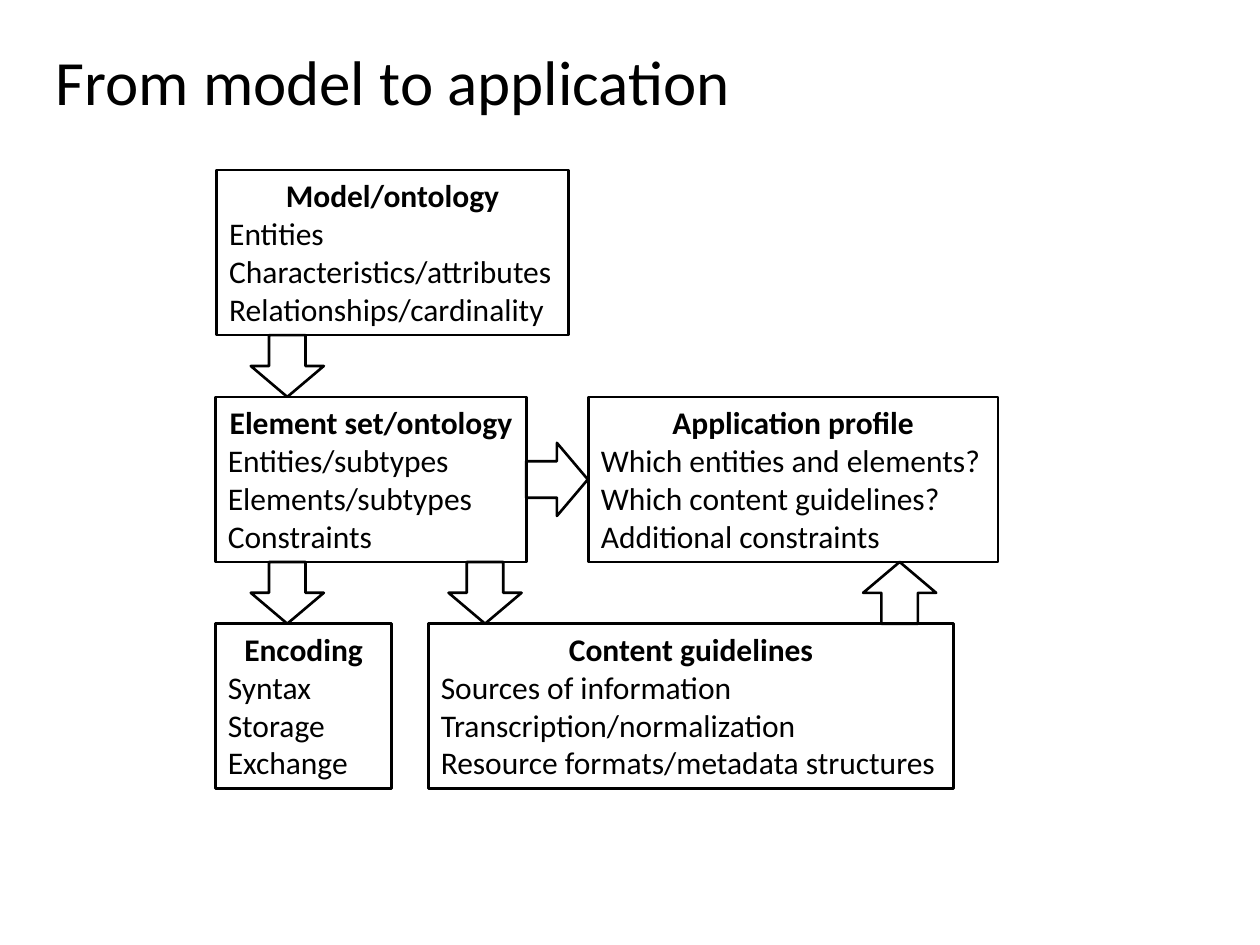
from pptx import Presentation
from pptx.dml.color import RGBColor
from pptx.enum.shapes import MSO_SHAPE
from pptx.enum.text import MSO_ANCHOR, MSO_AUTO_SIZE, PP_ALIGN
from pptx.util import Inches, Pt

RECT, ARROW = MSO_SHAPE.RECTANGLE, MSO_SHAPE.DOWN_ARROW
LEFT, CENTER = PP_ALIGN.LEFT, PP_ALIGN.CENTER
TOP = MSO_ANCHOR.TOP
FIT = MSO_AUTO_SIZE.SHAPE_TO_FIT_TEXT

FONT, BLACK = "Calibri", "000000"
TITLE = "From model to application"
ROW_TOP, BOX_H, GAP = 1.35, 1.31, 0.49
ARROW_W = 0.58

# row, left, width, heading, lines
BOXES = [
    (0, 1.72, 2.79, "Model/ontology",
     ["Entities", "Characteristics/attributes", "Relationships/cardinality"]),
    (1, 1.71, 2.47, "Element set/ontology",
     ["Entities/subtypes", "Elements/subtypes", "Constraints"]),
    (1, 4.67, 3.25, "Application profile",
     ["Which entities and elements?", "Which content guidelines?",
      "Additional constraints"]),
    (2, 1.71, 1.4, "Encoding", ["Syntax", "Storage", "Exchange"]),
    (2, 3.4, 4.17, "Content guidelines",
     ["Sources of information", "Transcription/normalization",
      "Resource formats/metadata structures"]),
]
VERTICAL_ARROWS = [(0, 1.99, 0), (1, 1.99, 0), (1, 3.56, 0), (1, 6.85, 180)]
SIDE_ARROW_LEFT = 4.13


def color(value):
    return RGBColor.from_string(value)


def row_y(row):
    return ROW_TOP + row * (BOX_H + GAP)


def write(p, text, size=18, bold=False, align=LEFT):
    p.alignment = align
    r = p.add_run()
    r.text = text
    r.font.name = FONT
    r.font.size = Pt(size)
    r.font.bold = bold
    r.font.color.rgb = color(BLACK)


def add_outline(s, kind, x, y, w, h, rotation=0):
    sp = s.shapes.add_shape(kind, Inches(x), Inches(y), Inches(w), Inches(h))
    sp.shadow.inherit = False
    sp.fill.background()
    sp.line.color.rgb = color(BLACK)
    sp.line.width = Pt(1.5)
    sp.rotation = rotation
    return sp


def fit_text(tf):
    tf.word_wrap = False
    tf.auto_size = FIT
    tf.vertical_anchor = TOP


def add_box(s, row, x, w, heading, lines):
    tf = add_outline(s, RECT, x, row_y(row), w, BOX_H).text_frame
    fit_text(tf)
    write(tf.paragraphs[0], heading, bold=True, align=CENTER)
    for line in lines:
        write(tf.add_paragraph(), line)


def main():
    prs = Presentation()
    prs.slide_width, prs.slide_height = Inches(10), Inches(7.5)
    s = prs.slides.add_slide(prs.slide_layouts[5])

    title = s.shapes.title
    title.left, title.top = Inches(0.34), Inches(0.29)
    title.width, title.height = Inches(5.61), Inches(0.71)
    fit_text(title.text_frame)
    write(title.text_frame.paragraphs[0], TITLE, size=36)

    for box in BOXES:
        add_box(s, *box)
    for row, x, rotation in VERTICAL_ARROWS:
        add_outline(s, ARROW, x, row_y(row) + BOX_H, ARROW_W, GAP, rotation)
    side_y = row_y(1) + (BOX_H - GAP) / 2
    add_outline(s, ARROW, SIDE_ARROW_LEFT, side_y, ARROW_W, GAP, 270)

    prs.save("out.pptx")


if __name__ == "__main__":
    main()
